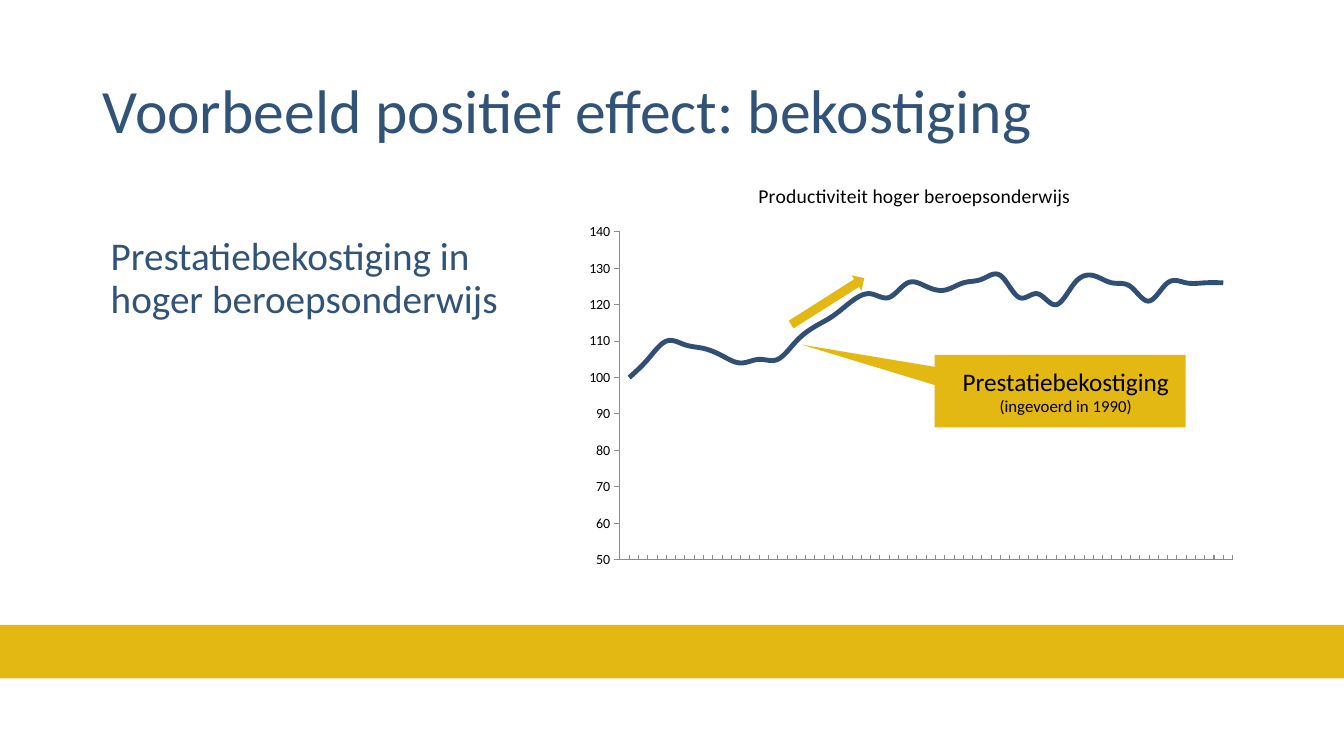
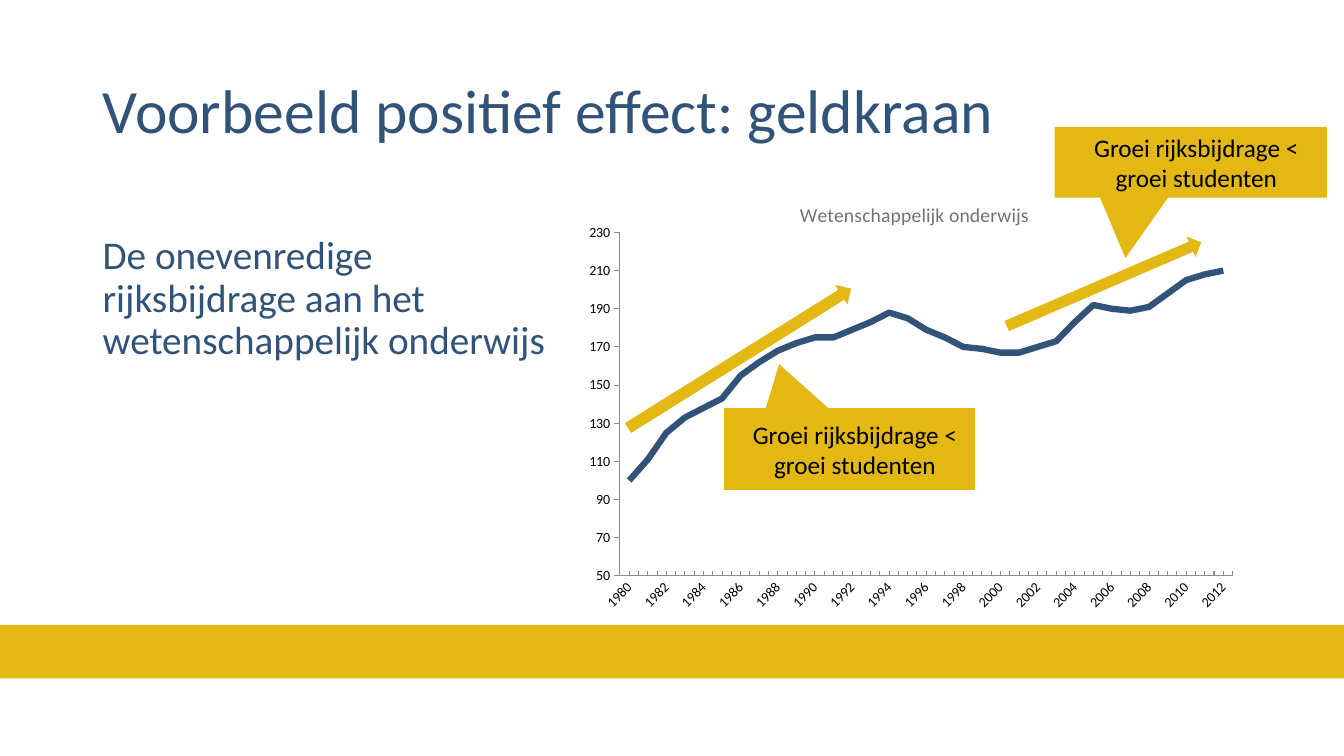
from lxml.etree import SubElement
from pptx import Presentation
from pptx.chart.data import CategoryChartData
from pptx.dml.color import RGBColor
from pptx.enum.chart import XL_CHART_TYPE, XL_TICK_LABEL_POSITION, XL_TICK_MARK
from pptx.enum.shapes import MSO_SHAPE
from pptx.enum.text import MSO_ANCHOR, PP_ALIGN
from pptx.oxml import parse_xml
from pptx.oxml.ns import nsdecls, qn
from pptx.util import Inches, Pt

FONT = "Calibri"
COLORS = {
    "gold": "E3B813",
    "blue": "315378",
    "line_blue": "314F75",
    "black": "000000",
    "gray": "767171",
    "axis": "8B8B8B",
}
WIDTH, HEIGHT = Inches(13.33), Inches(7.5)
YEARS = [str(year) for year in range(1980, 2013)]
COLLEGE_INDEX = [
    100, 105, 110, 109, 108, 106, 104, 105, 105, 110, 114,
    117, 121, 123, 122, 126, 125, 124, 126, 127, 128, 122,
    123, 120, 126, 128, 126, 125, 121, 126, 126, 126, 126,
]
UNIVERSITY_INDEX = [
    100, 111, 125, 133, 138, 143, 155, 162, 168, 172, 175,
    175, 179, 183, 188, 185, 179, 175, 170, 169, 167, 167,
    170, 173, 183, 192, 190, 189, 191, 198, 205, 208, 210,
]


def area(left, top, width, height):
    """Turn percentages of the slide into lengths."""
    return (round(WIDTH * left / 100), round(HEIGHT * top / 100),
            round(WIDTH * width / 100), round(HEIGHT * height / 100))


def color(name):
    return RGBColor.from_string(COLORS[name])


def style_font(font, size, color_name):
    font.name = FONT
    font.size = Pt(size)
    font.bold = False
    font.color.rgb = color(color_name)


# Text and shapes
def add_text(page, place, text, size, anchor=MSO_ANCHOR.TOP):
    box = page.shapes.add_textbox(*area(*place))
    frame = box.text_frame
    frame.word_wrap = True
    frame.vertical_anchor = anchor
    frame.text = text
    para = frame.paragraphs[0]
    para.line_spacing = 0.9
    style_font(para.runs[0].font, size, "blue")


def add_gold_shape(page, kind, place):
    shape = page.shapes.add_shape(kind, *area(*place))
    shape.shadow.inherit = False
    shape.fill.solid()
    shape.fill.fore_color.rgb = color("gold")
    shape.line.fill.background()
    return shape


def add_arrow(page, place, rotation):
    arrow = add_gold_shape(page, MSO_SHAPE.RIGHT_ARROW, place)
    arrow.rotation = rotation


def add_callout(page, place, pointer, lines):
    callout = add_gold_shape(page, MSO_SHAPE.RECTANGULAR_CALLOUT, place)
    for index, value in enumerate(pointer):
        callout.adjustments[index] = value
    frame = callout.text_frame
    frame.word_wrap = True
    frame.vertical_anchor = MSO_ANCHOR.MIDDLE
    frame.text = "\n".join(text for text, size in lines)
    for para, (text, size) in zip(frame.paragraphs, lines):
        para.alignment = PP_ALIGN.CENTER
        para._p.get_or_add_pPr().set("marL", str(Inches(0.11)))
        style_font(para.runs[0].font, size, "black")


# Chart
def set_plot_layout(chart, **shares):
    plot_area = chart._chartSpace.chart.plotArea
    for old in plot_area.findall(qn("c:layout")):
        plot_area.remove(old)
    layout = parse_xml(f"<c:layout {nsdecls('c')}><c:manualLayout/></c:layout>")
    settings = {"layoutTarget": "inner", "xMode": "edge", "yMode": "edge", **shares}
    for name, value in settings.items():
        SubElement(layout[0], qn(f"c:{name}")).set("val", str(value))
    plot_area.insert(0, layout)


def style_axes(chart, maximum, step, show_years):
    values, years = chart.value_axis, chart.category_axis
    values.minimum_scale, values.maximum_scale = 50, maximum
    values.major_unit = step
    values.has_major_gridlines = False
    values.major_tick_mark = XL_TICK_MARK.OUTSIDE
    years.major_tick_mark = XL_TICK_MARK.NONE
    years.minor_tick_mark = XL_TICK_MARK.INSIDE
    for axis in (values, years):
        axis.format.line.color.rgb = color("axis")
        axis.format.line.width = Pt(0.75)
        style_font(axis.tick_labels.font, 10, "black")
    if show_years:
        years._element.find(qn("c:txPr")).find(qn("a:bodyPr")).set("rot", "-2700000")
    else:
        years.tick_label_position = XL_TICK_LABEL_POSITION.NONE


def add_line_chart(page, top, title, title_color, values, line_color, line_width,
                   smooth, maximum, step, show_years, plot_top, plot_height):
    data = CategoryChartData()
    data.categories = YEARS
    data.add_series("Series 1", values)
    place = area(42.91, top, 50.26, 56.93)
    chart = page.shapes.add_chart(XL_CHART_TYPE.LINE, *place, data).chart
    style_font(chart.font, 10, "black")
    chart.has_legend = False
    chart.has_title = True
    chart.chart_title.include_in_layout = False
    chart.chart_title.text_frame.text = title
    span = chart.chart_title.text_frame.paragraphs[0].runs[0]
    style_font(span.font, 14, title_color)
    chart.plots[0].vary_by_categories = False
    series = chart.plots[0].series[0]
    series.smooth = smooth
    series.format.line.color.rgb = color(line_color)
    series.format.line.width = Pt(line_width)
    style_axes(chart, maximum, step, show_years)
    set_plot_layout(chart, x=0.064, y=plot_top, w=0.907, h=plot_height)


# Shared page: gold band and title
def add_page(deck, title):
    page = deck.slides.add_slide(deck.slide_layouts[6])
    add_gold_shape(page, MSO_SHAPE.RECTANGLE, (0, 82.67, 100, 7.07))
    add_text(page, (6.9, 5.33, 86.27, 19.33), title, 44, MSO_ANCHOR.MIDDLE)
    return page


def add_funding_page(deck):
    page = add_page(deck, "Voorbeeld positief effect: bekostiging")
    add_text(page, (7.5, 30.67, 30.6, 39.07),
             "Prestatiebekostiging in hoger beroepsonderwijs", 28)
    add_line_chart(page, 21.73, "Productiviteit hoger beroepsonderwijs", "black",
                   COLLEGE_INDEX, "line_blue", 3.5, smooth=True, maximum=140, step=10,
                   show_years=False, plot_top=0.157, plot_height=0.762)
    add_arrow(page, (58.36, 38.67, 6.45, 2.4), 327.6)
    add_callout(page, (69.54, 46.93, 18.68, 9.6), (-1.03, -0.64),
                [("Prestatiebekostiging", 18), ("(ingevoerd in 1990)", 12)])


def add_budget_page(deck):
    page = add_page(deck, "Voorbeeld positief effect: geldkraan")
    add_text(page, (6.9, 30.53, 35.33, 39.07),
             "De onevenredige rijksbijdrage aan het wetenschappelijk onderwijs", 28)
    add_line_chart(page, 24.27, "Wetenschappelijk onderwijs", "gray",
                   UNIVERSITY_INDEX, "blue", 4.5, smooth=False, maximum=230, step=20,
                   show_years=True, plot_top=0.114, plot_height=0.798)
    add_arrow(page, (45.24, 45.87, 19.58, 3.07), 328)
    add_arrow(page, (74.27, 36.13, 15.75, 2.93), 336.7)
    growth = [("Groei rijksbijdrage < groei studenten", 18)]
    add_callout(page, (53.86, 54, 18.68, 10.8), (-0.28, -1.04), growth)
    add_callout(page, (78.47, 16.8, 20.26, 9.33), (-0.24, 1.36), growth)


def main():
    deck = Presentation()
    deck.slide_width, deck.slide_height = WIDTH, HEIGHT
    add_funding_page(deck)
    add_budget_page(deck)
    deck.save("out.pptx")


if __name__ == "__main__":
    main()
